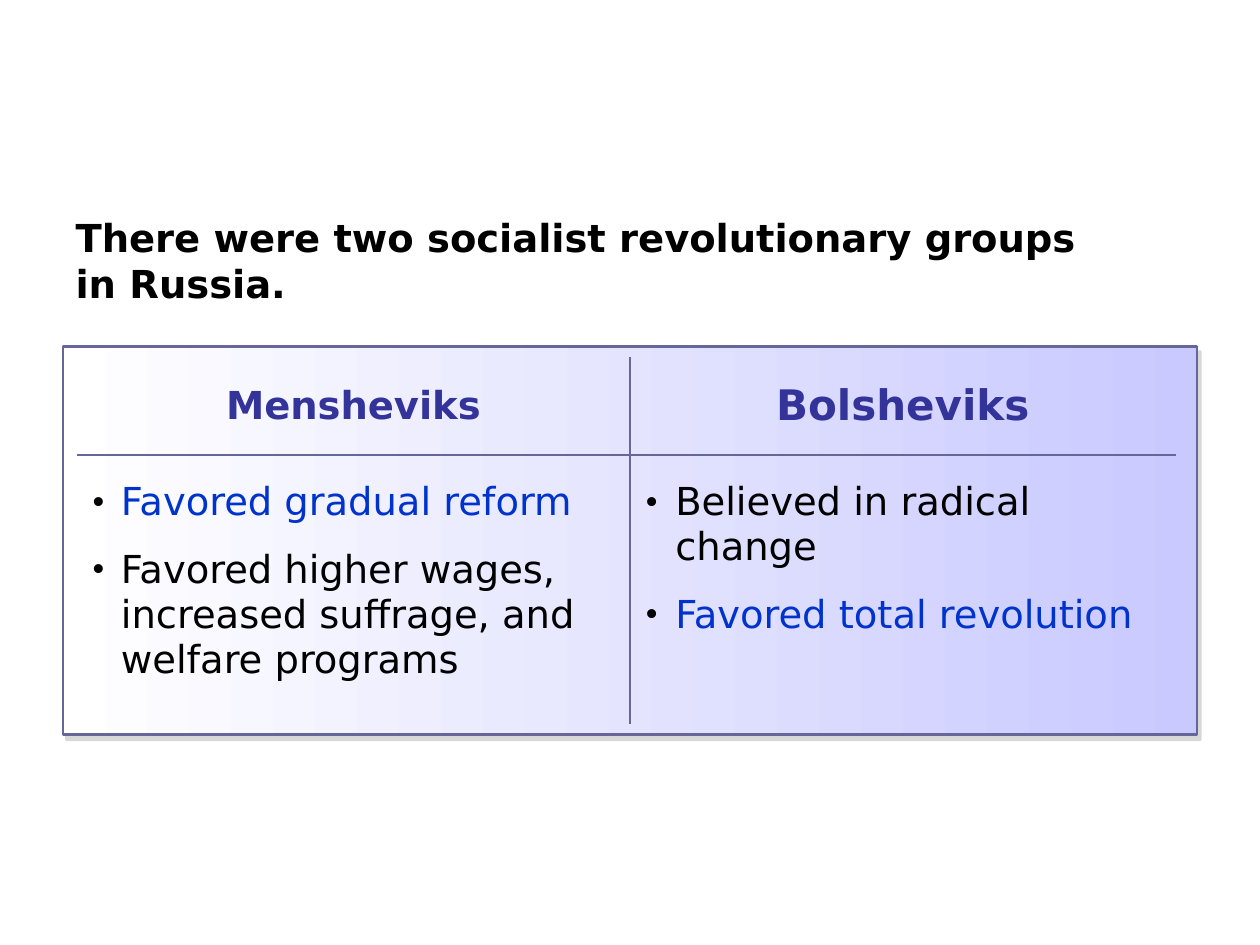
from dataclasses import dataclass

from lxml.etree import SubElement
from pptx import Presentation
from pptx.dml.color import RGBColor
from pptx.enum.shapes import MSO_SHAPE
from pptx.enum.text import MSO_ANCHOR, MSO_AUTO_SIZE, PP_ALIGN
from pptx.oxml.ns import qn
from pptx.util import Inches, Pt


@dataclass(frozen=True)
class Theme:
    font: str = "DejaVu Sans"
    body_size: int = 22
    large_size: int = 24
    text: str = "000000"
    heading: str = "333399"
    accent: str = "0033CC"
    border: str = "666699"
    shadow: str = "B2B2B2"
    panel_start: str = "FFFFFF"
    panel_end: str = "C9C9FF"


THEME = Theme()
NO_GRID_STYLE = "{2D5ABB26-0587-4C30-8999-92F81FD0307C}"

HEADINGS = [("Mensheviks", THEME.body_size), ("Bolsheviks", THEME.large_size)]
POINTS = [
    [
        ("Favored gradual reform", THEME.accent),
        ("Favored higher wages, increased suffrage, and welfare programs", THEME.text),
    ],
    [
        ("Believed in radical change", THEME.text),
        ("Favored total revolution", THEME.accent),
    ],
]
# Inner borders, by row and column
BORDERS = [["RB", "LB"], ["RT", "LT"]]


def write(para, text, size=THEME.body_size, color=THEME.text, bold=False,
          align=PP_ALIGN.LEFT, before=0, after=0):
    para.text = text
    para.alignment = align
    para.space_before, para.space_after = Pt(before), Pt(after)
    for span in para.runs:
        span.font.name = THEME.font
        span.font.size = Pt(size)
        span.font.bold = bold
        span.font.color.rgb = RGBColor.from_string(color)


def add_bullet(para, indent):
    properties = para._p.get_or_add_pPr()
    properties.set("marL", str(Inches(indent)))
    properties.set("indent", str(-Inches(indent)))
    color = SubElement(properties, qn("a:buClr"))
    SubElement(color, qn("a:srgbClr"), val=THEME.text)
    SubElement(properties, qn("a:buSzPct"), val="80000")
    SubElement(properties, qn("a:buFont"), typeface=THEME.font)
    SubElement(properties, qn("a:buChar"), char="•")


def set_borders(cell, sides):
    properties = cell._tc.get_or_add_tcPr()
    for side in "LRTB":
        if side in sides:
            line = SubElement(properties, qn(f"a:ln{side}"), w=str(Pt(1)))
            fill = SubElement(line, qn("a:solidFill"))
            SubElement(fill, qn("a:srgbClr"), val=THEME.border)


def add_title(page):
    title = page.shapes.title
    title.left, title.top = Inches(0.5), Inches(1.65)
    title.width, title.height = Inches(9), Inches(0.84)
    frame = title.text_frame
    frame.word_wrap = True
    frame.auto_size = MSO_AUTO_SIZE.SHAPE_TO_FIT_TEXT
    frame.vertical_anchor = MSO_ANCHOR.TOP
    write(frame.paragraphs[0],
          "There were two socialist revolutionary groups \vin Russia.", bold=True)


def add_panel(page):
    """Add the gradient panel with its offset shadow."""
    panel = page.shapes.add_shape(
        MSO_SHAPE.RECTANGLE, Inches(0.5), Inches(2.75), Inches(9), Inches(3.08))
    panel.fill.gradient()
    panel.fill.gradient_angle = 0
    colors = (THEME.panel_start, THEME.panel_end)
    for position, (stop, color) in enumerate(zip(panel.fill.gradient_stops, colors)):
        stop.position = position
        stop.color.rgb = RGBColor.from_string(color)
    panel.line.color.rgb = RGBColor.from_string(THEME.border)
    panel.line.width = Pt(1.5)
    panel.shadow.inherit = False
    effects = panel._element.spPr.find(qn("a:effectLst"))
    shadow = SubElement(effects, qn("a:outerShdw"), blurRad="0", dist=str(Pt(3.6)),
                        dir=str(56 * 60000), algn="ctr", rotWithShape="0")
    color = SubElement(shadow, qn("a:srgbClr"), val=THEME.shadow)
    SubElement(color, qn("a:alpha"), val="50000")


def fill_heading(cell, text, size):
    cell.vertical_anchor = MSO_ANCHOR.MIDDLE
    write(cell.text_frame.paragraphs[0], text, size=size, color=THEME.heading,
          bold=True, align=PP_ALIGN.CENTER, before=0.2 * size)


def fill_points(cell, points, indent):
    cell.margin_top = Inches(0.2)
    frame = cell.text_frame
    for index, (text, color) in enumerate(points):
        para = frame.add_paragraph() if index else frame.paragraphs[0]
        write(para, text, color=color, after=0.6 * THEME.body_size)
        add_bullet(para, indent)


def add_comparison(page):
    frame = page.shapes.add_table(
        2, 2, Inches(0.61), Inches(2.83), Inches(8.72), Inches(2.92))
    table = frame.table
    table._tbl.tblPr.find(qn("a:tableStyleId")).text = NO_GRID_STYLE
    table.first_row = table.horz_banding = False
    for column, width in zip(table.columns, (4.39, 4.33)):
        column.width = Inches(width)
    for row, height in zip(table.rows, (0.78, 2.14)):
        row.height = Inches(height)
    for row, sides_by_column in enumerate(BORDERS):
        for column, sides in enumerate(sides_by_column):
            cell = table.cell(row, column)
            set_borders(cell, sides)
            cell.fill.background()
    for column, (heading, points) in enumerate(zip(HEADINGS, POINTS)):
        fill_heading(table.cell(0, column), *heading)
        fill_points(table.cell(1, column), points, indent=0.25 + 0.01 * column)


def main():
    deck = Presentation()
    deck.slide_width, deck.slide_height = Inches(10), Inches(7.5)
    page = deck.slides.add_slide(deck.slide_layouts[5])
    add_title(page)
    add_panel(page)
    add_comparison(page)
    deck.save("out.pptx")


if __name__ == "__main__":
    main()
